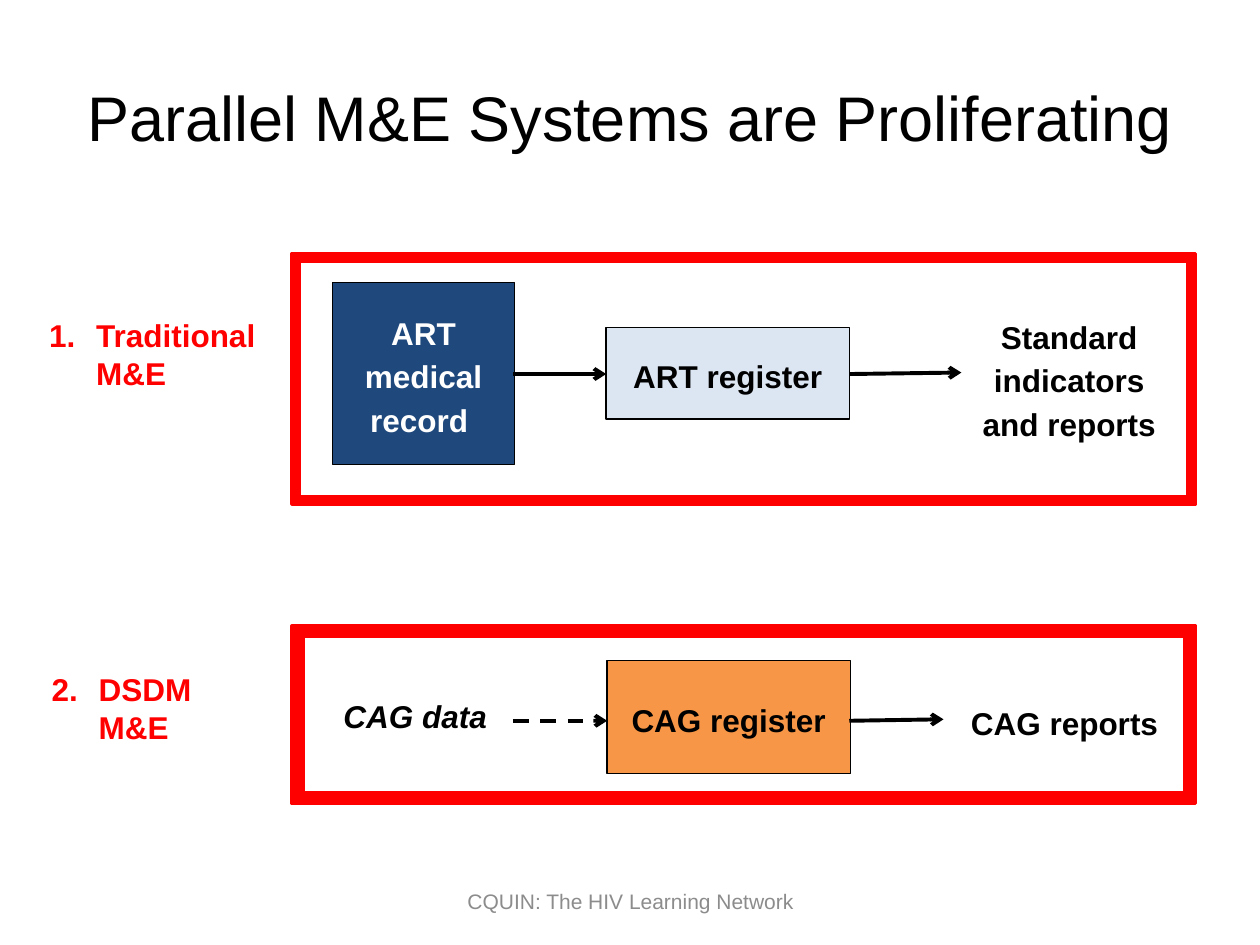
from lxml.etree import SubElement
from pptx import Presentation
from pptx.dml.color import RGBColor
from pptx.enum.dml import MSO_LINE
from pptx.enum.shapes import MSO_CONNECTOR, MSO_SHAPE
from pptx.enum.text import MSO_ANCHOR, PP_ALIGN
from pptx.oxml.ns import qn
from pptx.util import Cm, Pt

BLACK, WHITE, RED, GRAY = "000000", "FFFFFF", "FF0000", "8C8C8C"
NAVY, PALE_BLUE, ORANGE = "1F497D", "DCE6F2", "F79646"
BOLD = {"size": Pt(18), "bold": True}


def color(value):
    return RGBColor.from_string(value)


def set_text(sp, text, fmt, text_color=BLACK, **para):
    tf = sp.text_frame
    tf.word_wrap = True
    tf.vertical_anchor = MSO_ANCHOR.MIDDLE
    p = tf.paragraphs[0]
    p.text = text
    for name, value in ({"alignment": PP_ALIGN.CENTER} | para).items():
        setattr(p, name, value)
    for r in p.runs:
        for name, value in ({"name": "Arial"} | fmt).items():
            setattr(r.font, name, value)
        r.font.color.rgb = color(text_color)
    return p


def add_text(s, box, text, fmt=BOLD, text_color=BLACK, **para):
    sp = s.shapes.add_textbox(*map(Cm, box))
    return sp, set_text(sp, text, fmt, text_color, **para)


def add_numbered(s, box, text, number):
    sp, p = add_text(s, box, text, text_color=RED, alignment=PP_ALIGN.LEFT)
    sp.text_frame.vertical_anchor = MSO_ANCHOR.TOP
    pPr = p._p.get_or_add_pPr()
    pPr.set("marL", str(Cm(0.95)))
    pPr.set("indent", str(-Cm(0.95)))
    SubElement(pPr, qn("a:buAutoNum"), type="arabicPeriod", startAt=str(number))


def add_shape(s, kind, box, fill, line, width):
    sp = s.shapes.add_shape(kind, *map(Cm, box))
    sp.shadow.inherit = False
    sp.fill.solid()
    sp.fill.fore_color.rgb = color(fill)
    sp.line.color.rgb = color(line)
    sp.line.width = Pt(width)
    return sp


def add_frame(s, top, height, thickness):
    box = (5.89, top, 18.21, height)
    sp = add_shape(s, MSO_SHAPE.FRAME, box, RED, RED, 2)
    sp.adjustments[0] = thickness


def add_box(s, box, text, fill, text_color=BLACK):
    sp = add_shape(s, MSO_SHAPE.RECTANGLE, box, fill, BLACK, 0.75)
    set_text(sp, text, BOLD, text_color, line_spacing=1.15)


def add_arrow(s, x1, y1, x2, y2, dashed=False):
    ln = s.shapes.add_connector(MSO_CONNECTOR.STRAIGHT, *map(Cm, (x1, y1, x2, y2)))
    ln.line.color.rgb = color(BLACK)
    ln.line.width = Pt(2.25)
    if dashed:
        ln.line.dash_style = MSO_LINE.DASH
    SubElement(ln.line._get_or_add_ln(), qn("a:tailEnd"), type="arrow")
    SubElement(ln._element.spPr, qn("a:effectLst"))


def add_title(s, text):
    sp = s.shapes.title
    box = {"left": 1.27, "top": 0.76, "width": 22.86, "height": 3.18}
    for name, value in box.items():
        setattr(sp, name, Cm(value))
    set_text(sp, text, {"size": Pt(36)})


def add_traditional(s):
    add_numbered(s, (0.74, 6.25, 5.51, 2.57), "Traditional\vM&E", 1)
    add_frame(s, 5.11, 5.05, 0.03)
    add_box(s, (6.71, 5.69, 3.66, 3.68), "ART medical record ", NAVY, WHITE)
    add_box(s, (12.22, 6.6, 4.9, 1.85), "ART register", PALE_BLUE)
    add_arrow(s, 10.34, 7.54, 12.22, 7.54)
    add_arrow(s, 17.12, 7.54, 19.38, 7.51)
    add_text(s, (19.41, 5.79, 4.29, 3.63), "Standard indicators and reports",
             line_spacing=1.15)


def add_dsdm(s):
    add_numbered(s, (0.79, 13.39, 5.11, 1.8), "DSDM\vM&E", 2)
    add_frame(s, 12.62, 3.58, 0.06)
    add_text(s, (6.25, 13.59, 4.24, 1.57), "CAG data", BOLD | {"italic": True},
             line_spacing=1.15)
    add_box(s, (12.24, 13.31, 4.9, 2.29), "CAG register", ORANGE)
    add_arrow(s, 10.34, 14.53, 12.24, 14.53, dashed=True)
    add_arrow(s, 17.12, 14.53, 19.02, 14.5)
    add_text(s, (18.82, 13.39, 5.28, 2.26), "CAG reports", line_spacing=1.15)


def main():
    prs = Presentation()
    prs.slide_width, prs.slide_height = Cm(25.4), Cm(19.05)
    s = prs.slides.add_slide(prs.slide_layouts[5])
    add_title(s, "Parallel M&E Systems are Proliferating")
    add_traditional(s)
    add_dsdm(s)
    add_text(s, (8.69, 17.65, 8.05, 1.02), "CQUIN: The HIV Learning Network",
             {"size": Pt(12)}, GRAY)
    prs.save("out.pptx")


if __name__ == "__main__":
    main()
